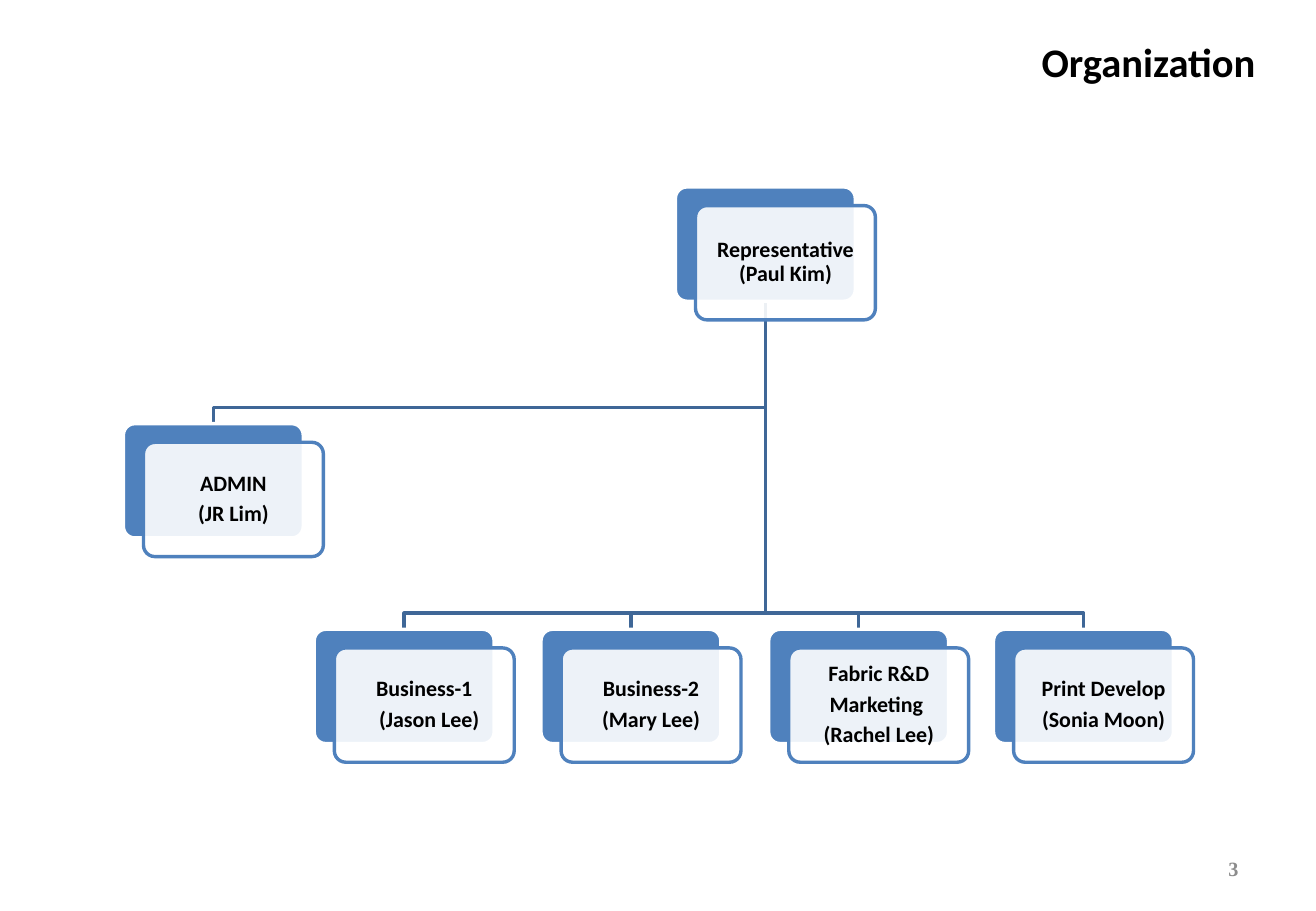
from dataclasses import dataclass

from lxml.etree import SubElement
from pptx import Presentation
from pptx.dml.color import RGBColor as RGB
from pptx.enum.shapes import MSO_SHAPE as Shape
from pptx.enum.text import MSO_ANCHOR as Anchor, PP_ALIGN as Align
from pptx.oxml.ns import qn
from pptx.util import Cm, Pt


@dataclass(frozen=True)
class Theme:
    blue: RGB = RGB(0x4F, 0x81, 0xBD)
    link: RGB = RGB(0x3F, 0x67, 0x97)
    white: RGB = RGB(0xFF, 0xFF, 0xFF)
    black: RGB = RGB(0, 0, 0)
    grey: RGB = RGB(0x8C, 0x8C, 0x8C)
    font: str = "Calibri"
    number_font: str = "Times New Roman"
    title_size: float = 24
    box_size: float = 13
    number_size: float = 12
    line: float = 2


@dataclass(frozen=True)
class Post:
    """One box of the chart: back card position in cm, and its lines of text."""
    left: float
    top: float
    lines: tuple[str, ...]
    last_indent: float = 0

    @property
    def center(self) -> float:
        return self.left + BOX_W / 2


THEME = Theme()
BOX_W, BOX_H = 3.76, 2.39
SHIFT_X, SHIFT_Y = 0.42, 0.39  # front card against back card
DROP = 0.34  # from the horizontal branch down to a box
TEAM_TOP = 13.16

HEAD = Post(14.12, 3.91, ("Representative (Paul Kim)",))
REPORTS = (
    Post(2.58, 8.86, ("ADMIN", "(JR Lim)")),
    Post(6.57, TEAM_TOP, ("Business-1", "(Jason Lee)"), last_indent=0.2),
    Post(11.31, TEAM_TOP, ("Business-2", "(Mary Lee)")),
    Post(16.07, TEAM_TOP, ("Fabric R&D", "Marketing ", "(Rachel Lee)")),
    Post(20.77, TEAM_TOP, ("Print Develop", "(Sonia Moon)")),
)


def write(tf, lines: tuple[str, ...], *, size: float, color: RGB = THEME.black,
          font: str = THEME.font, align=Align.CENTER, anchor=Anchor.TOP,
          spacing: float = 1, after: float = 0) -> None:
    tf.word_wrap = True
    tf.vertical_anchor = anchor
    for i, line in enumerate(lines):
        p = tf.paragraphs[0] if i == 0 else tf.add_paragraph()
        p.alignment, p.line_spacing, p.space_after = align, spacing, Pt(after)
        r = p.add_run()
        r.text = line
        r.font.name, r.font.size, r.font.bold = font, Pt(size), True
        r.font.color.rgb = color


def add_text(s, left: float, top: float, width: float, height: float,
             text: str, **style) -> None:
    sp = s.shapes.add_textbox(Cm(left), Cm(top), Cm(width), Cm(height))
    write(sp.text_frame, (text,), **style)


def add_card(s, left: float, top: float, fill: RGB, line: RGB):
    sp = s.shapes.add_shape(Shape.ROUNDED_RECTANGLE, Cm(left), Cm(top), Cm(BOX_W), Cm(BOX_H))
    sp.adjustments[0] = 0.1
    sp.shadow.inherit = False
    sp.fill.solid()
    sp.fill.fore_color.rgb = fill
    sp.line.color.rgb, sp.line.width = line, Pt(THEME.line)
    return sp


def add_post(s, post: Post) -> None:
    add_card(s, post.left, post.top, THEME.blue, THEME.white)
    sp = add_card(s, post.left + SHIFT_X, post.top + SHIFT_Y, THEME.white, THEME.blue)
    # Front card is 90% opaque
    color = sp.fill._xPr.find(qn("a:solidFill"))[0]
    SubElement(color, qn("a:alpha"), val="90000")
    tf = sp.text_frame
    tf.margin_left = tf.margin_right = tf.margin_top = tf.margin_bottom = Cm(0.13)
    write(tf, post.lines, size=THEME.box_size, anchor=Anchor.MIDDLE, spacing=0.9, after=4.1)
    if post.last_indent:
        pPr = tf.paragraphs[-1]._p.get_or_add_pPr()
        pPr.set("marL", str(Cm(post.last_indent)))


def add_link(s, head: Post, report: Post) -> None:
    branch = report.top - DROP
    points = ((head.center, branch), (report.center, branch), (report.center, report.top))
    path = s.shapes.build_freeform(Cm(head.center), Cm(head.top + BOX_H))
    path.add_line_segments([(Cm(x), Cm(y)) for x, y in points], close=False)
    sp = path.convert_to_shape()
    sp.shadow.inherit = False
    sp.fill.background()
    sp.line.color.rgb, sp.line.width = THEME.link, Pt(THEME.line)


def main() -> None:
    prs = Presentation()
    prs.slide_width, prs.slide_height = Cm(27.51), Cm(19.05)
    s = prs.slides.add_slide(prs.slide_layouts[6])

    # Links lie behind the boxes
    for report in reversed(REPORTS):
        add_link(s, HEAD, report)
    for post in (HEAD, *REPORTS):
        add_post(s, post)

    # Title and page number
    add_text(s, 21.36, 0.66, 5.49, 1.27, "Organization ", size=THEME.title_size)
    add_text(s, 19.71, 17.65, 6.43, 1.02, "3", size=THEME.number_size, color=THEME.grey,
             font=THEME.number_font, align=Align.RIGHT, anchor=Anchor.MIDDLE)

    prs.save("out.pptx")


if __name__ == "__main__":
    main()
